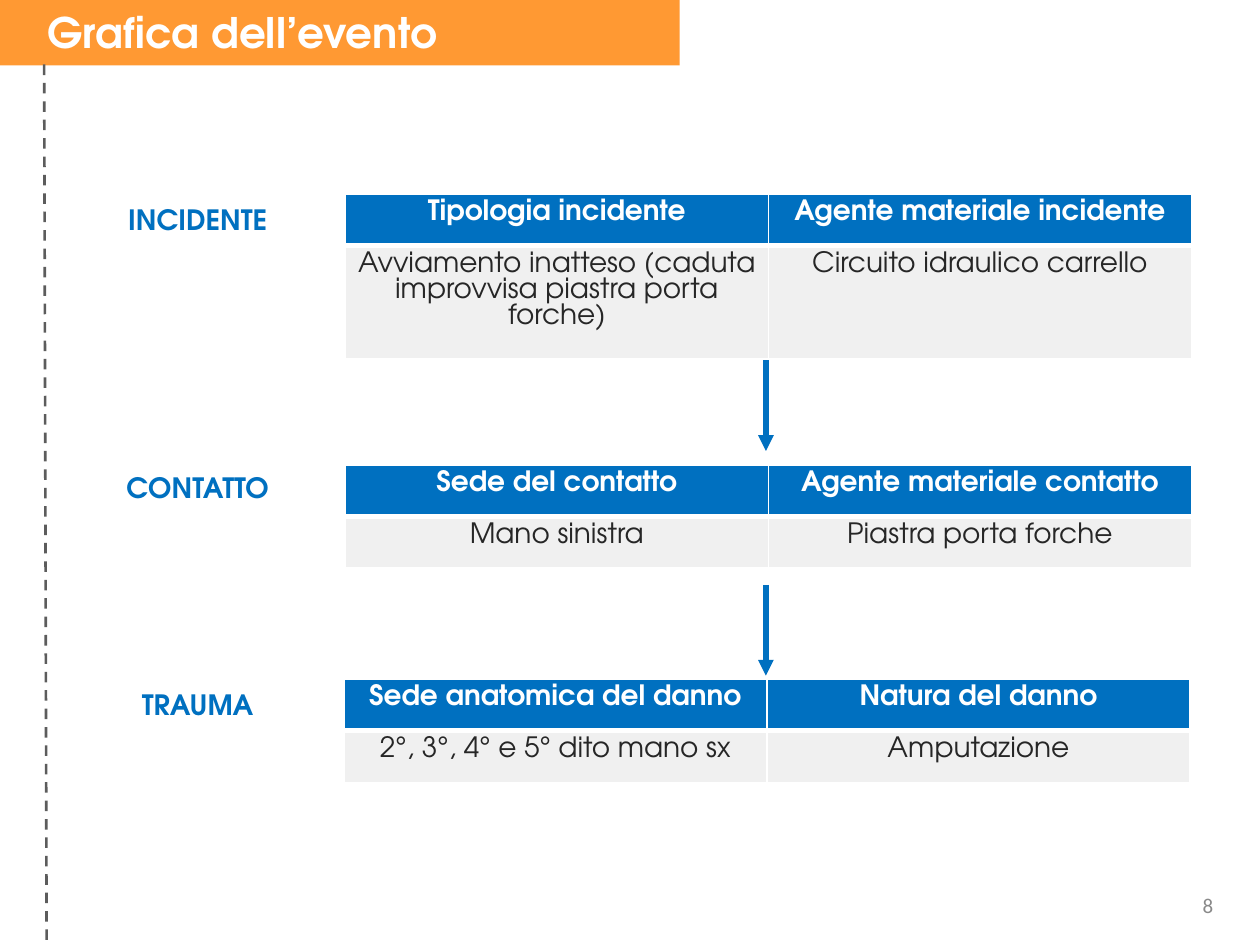
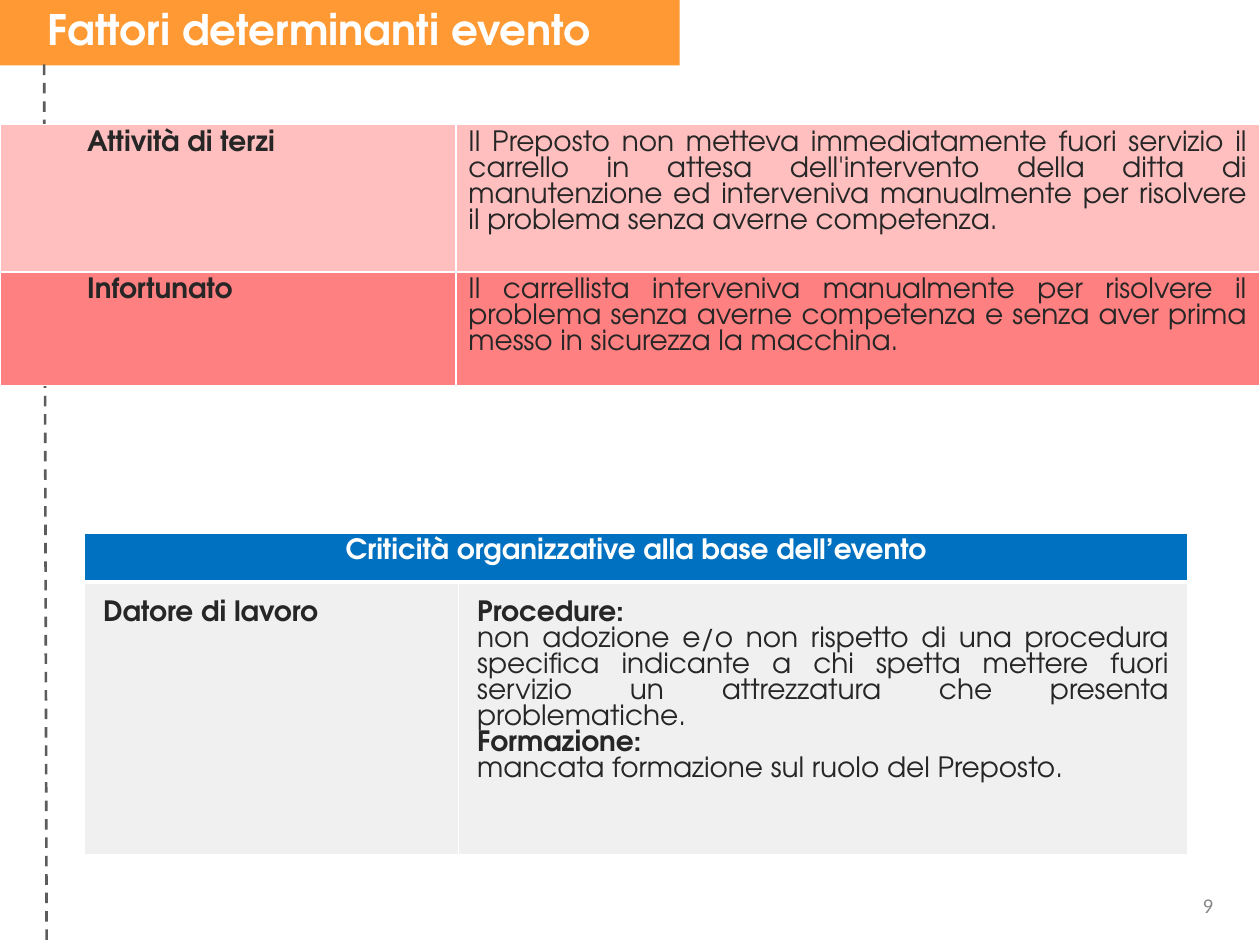
from dataclasses import dataclass
from typing import Any

from lxml import etree
from pptx import Presentation
from pptx import util as u
from pptx.dml.color import RGBColor
from pptx.enum import dml, shapes, text
from pptx.oxml import ns

BLUE, WHITE, GRAY = "0070C0", "FFFFFF", "F0F0F0"
DARK, ORANGE, DASH = "262626", "FF9933", "5C5C5C"
PINK, CORAL, PALE = "FFBFBF", "FF8080", "898989"
FONT = "TeX Gyre Adventor"
LEFT, MID = text.PP_ALIGN.LEFT, text.PP_ALIGN.CENTER
RIGHT, JUST = text.PP_ALIGN.RIGHT, text.PP_ALIGN.JUSTIFY
SIDES = ("left", "right", "top", "bottom")


@dataclass
class Par:
    text: str
    bold: bool = False
    ink: str = DARK
    align: Any = LEFT
    size: float = 16
    font: str = FONT
    indent: float = 0


@dataclass
class Cell:
    pars: list[Par]
    fill: str
    inset: float | None = None


@dataclass
class Grid:
    left: float
    top: float
    cols: list[float]
    rows: list[float]
    cells: list[list[Cell]]
    head: bool = True


@dataclass
class Stage:
    label: str
    label_top: float
    left: float
    top: float
    height: float
    heads: tuple[str, str]
    facts: tuple[str, str]


STAGES = [
    Stage("INCIDENTE", 3.91, 6.96, 3.91, 2.29,
          ("Tipologia incidente", "Agente materiale incidente"),
          ("Avviamento inatteso (caduta improvvisa piastra porta forche)",
           "Circuito idraulico carrello")),
    Stage("CONTATTO", 9.32, 6.96, 9.37, 1.04,
          ("Sede del contatto", "Agente materiale contatto"),
          ("Mano sinistra", "Piastra porta forche")),
    Stage("TRAUMA", 13.69, 6.93, 13.69, 1.04,
          ("Sede anatomica del danno", "Natura del danno"),
          ("2°, 3°, 4° e 5° dito mano sx", "Amputazione")),
]
ARROWS = [7.26, 11.79]
FACTORS = [
    ("Attività di terzi", PINK,
     "Il Preposto non metteva immediatamente fuori servizio il carrello in "
     "attesa dell'intervento della ditta di manutenzione ed interveniva "
     "manualmente per risolvere il problema senza averne competenza."),
    ("Infortunato", CORAL,
     "Il carrellista interveniva manualmente per risolvere il problema senza "
     "averne competenza e senza aver prima messo in sicurezza la macchina."),
]
CAUSES = [
    Par("Procedure:", True),
    Par("non adozione e/o non rispetto di una procedura specifica indicante a "
        "chi spetta mettere fuori servizio un attrezzatura che presenta "
        "problematiche.", align=JUST),
    Par("Formazione:", True, align=JUST),
    Par("mancata formazione sul ruolo del Preposto.", align=JUST),
]


def tint(code: str) -> RGBColor:
    return RGBColor.from_string(code)


def apply(item: Any, form: dict[str, Any]) -> None:
    for key, value in form.items():
        setattr(item, key, value)


def paint(item: Any, code: str) -> None:
    item.fill.solid()
    item.fill.fore_color.rgb = tint(code)


def write(frame: Any, pars: list[Par]) -> None:
    for pos, par in enumerate(pars):
        line = frame.add_paragraph() if pos else frame.paragraphs[0]
        line.alignment = par.align
        if par.indent:
            line._p.get_or_add_pPr().set("marL", str(u.Cm(par.indent)))
        run = line.add_run()
        run.text = par.text
        apply(run.font, {"name": par.font, "size": u.Pt(par.size), "bold": par.bold})
        run.font.color.rgb = tint(par.ink)


def label(slide: Any, box: tuple[float, ...], par: Par,
          anchor: Any = text.MSO_ANCHOR.TOP) -> None:
    frame = slide.shapes.add_textbox(*map(u.Cm, box)).text_frame
    apply(frame, {"word_wrap": True, "vertical_anchor": anchor})
    write(frame, [par])


def stroke(slide: Any, ends: tuple[float, ...], code: str, width: float) -> Any:
    link = slide.shapes.add_connector(shapes.MSO_CONNECTOR.STRAIGHT, *map(u.Cm, ends))
    link.line.width = u.Pt(width)
    link.line.color.rgb = tint(code)
    etree.SubElement(link._element.spPr, ns.qn("a:effectLst"))
    return link.line


def arrow(slide: Any, top: float) -> None:
    line = stroke(slide, (15.44, top, 15.44, top + 1.83), BLUE, 3)
    etree.SubElement(line._get_or_add_ln(), ns.qn("a:tailEnd"), type="triangle")


def edge(cell: Any, widths: dict[str, float]) -> None:
    props = cell._tc.get_or_add_tcPr()
    for side in SIDES:
        line = etree.SubElement(props, ns.qn(f"a:ln{side[0].upper()}"),
                                w=str(u.Pt(widths.get(side, 1))))
        fill = etree.SubElement(line, ns.qn("a:solidFill"))
        etree.SubElement(fill, ns.qn("a:srgbClr"), val=WHITE)


def table(slide: Any, grid: Grid) -> None:
    size = (sum(grid.cols), sum(grid.rows))
    frame = slide.shapes.add_table(len(grid.rows), len(grid.cols),
                                   *map(u.Cm, (grid.left, grid.top, *size)))
    tab = frame.table
    apply(tab, {"first_row": grid.head, "horz_banding": False})
    for col, width in zip(tab.columns, grid.cols):
        col.width = u.Cm(width)
    for row, height in zip(tab.rows, grid.rows):
        row.height = u.Cm(height)
    for num, line in enumerate(grid.cells):
        if len(line) < len(grid.cols):
            tab.cell(num, 0).merge(tab.cell(num, len(grid.cols) - 1))
        thick = {"top" if num else "bottom": 3} if grid.head else {}
        for pos, data in enumerate(line):
            cell = tab.cell(num, pos)
            edge(cell, thick)
            paint(cell, data.fill)
            if data.inset:
                apply(cell, {f"margin_{side}": u.Cm(data.inset) for side in SIDES})
            write(cell.text_frame, data.pars)


def head(title: str) -> Cell:
    return Cell([Par(title, True, WHITE, MID)], BLUE)


def start(deck: Any, title: str, top: float, number: int) -> Any:
    slide = deck.slides.add_slide(deck.slide_layouts[6])
    band = slide.shapes.add_shape(shapes.MSO_SHAPE.RECTANGLE,
                                  *map(u.Cm, (0, 0, 13.7, 1.32)))
    band.shadow.inherit = False
    paint(band, ORANGE)
    band.line.fill.background()
    stroke(slide, (0.89, 1.3, 0.94, 19.05), DASH, 1.5).dash_style = dml.MSO_LINE.DASH
    label(slide, (23.29, 17.86, 1.42, 1.07),
          Par(str(number), ink=PALE, align=RIGHT, size=12, font="Calibri"))
    label(slide, (0.71, top, 19.89, 1.27), Par(title, True, WHITE, size=24))
    return slide


def event(deck: Any) -> None:
    slide = start(deck, "Grafica dell’evento", 0, 8)
    for stage in STAGES:
        label(slide, (1.7, stage.label_top, 4.57, 1.02),
              Par(stage.label, True, BLUE, MID), text.MSO_ANCHOR.MIDDLE)
        facts = [Cell([Par(fact, align=MID)], GRAY) for fact in stage.facts]
        table(slide, Grid(stage.left, stage.top, [8.53] * 2, [1.04, stage.height],
                          [[head(name) for name in stage.heads], facts]))
    for top in ARROWS:
        arrow(slide, top)


def causes(deck: Any) -> None:
    slide = start(deck, "Fattori determinanti evento", -0.05, 9)
    table(slide, Grid(1.7, 10.74, [7.54, 14.71], [0.99, 5.51], [
        [head("Criticità organizzative alla base dell’evento")],
        [Cell([Par("Datore di lavoro", True)], GRAY, 0.38),
         Cell(CAUSES, GRAY, 0.38)]]))
    cells = [[Cell([Par(who, True, align=JUST, indent=1.5)], fill),
              Cell([Par(what, align=JUST)], fill)] for who, fill, what in FACTORS]
    table(slide, Grid(0, 2.51, [9.19, 16.21], [2.97, 2.29], cells, False))


def main() -> None:
    deck = Presentation()
    apply(deck, {"slide_width": u.Cm(25.4), "slide_height": u.Cm(19.05)})
    event(deck)
    causes(deck)
    deck.save("out.pptx")


if __name__ == "__main__":
    main()
